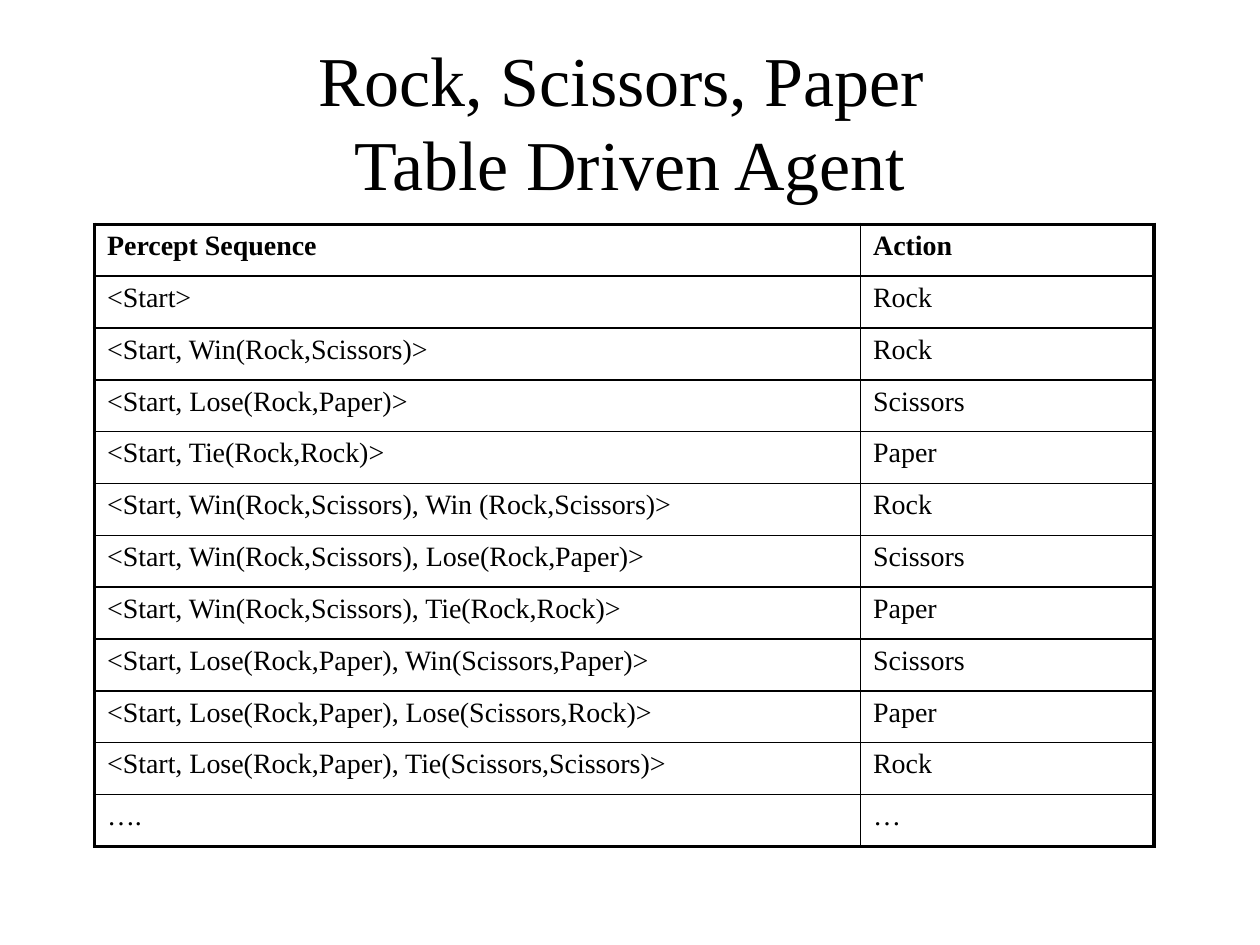
from lxml import etree
from pptx import Presentation
from pptx.dml.color import RGBColor
from pptx.enum.text import MSO_ANCHOR, PP_ALIGN
from pptx.oxml.ns import qn
from pptx.util import Inches, Pt

CENTER = PP_ALIGN.CENTER
MIDDLE = MSO_ANCHOR.MIDDLE
BLACK = "000000"
THICK, THIN = Pt(2.25), Pt(1)
TITLE_FORMAT = {"name": "Times New Roman", "size": Pt(40), "bold": False}
CELL_FORMAT = {"name": "Times New Roman", "size": Pt(16)}
ROWS = [
    ("Percept Sequence", "Action"),
    ("<Start>", "Rock"),
    ("<Start, Win(Rock,Scissors)>", "Rock"),
    ("<Start, Lose(Rock,Paper)>", "Scissors"),
    ("<Start, Tie(Rock,Rock)>", "Paper"),
    ("<Start, Win(Rock,Scissors), Win (Rock,Scissors)>", "Rock"),
    ("<Start, Win(Rock,Scissors), Lose(Rock,Paper)>", "Scissors"),
    ("<Start, Win(Rock,Scissors), Tie(Rock,Rock)>", "Paper"),
    ("<Start, Lose(Rock,Paper), Win(Scissors,Paper)>", "Scissors"),
    ("<Start, Lose(Rock,Paper), Lose(Scissors,Rock)>", "Paper"),
    ("<Start, Lose(Rock,Paper), Tie(Scissors,Scissors)>", "Rock"),
    ("….", "…"),
]
COLUMN_WIDTHS = [Inches(6.08), Inches(2.33)]
ROW_HEIGHT = Inches(4.94 / len(ROWS))


def format_font(font, values, color):
    for name, value in values.items():
        setattr(font, name, value)
    font.color.rgb = RGBColor.from_string(color)


def set_borders(cell, widths, color):
    """Draw the cell's edges; widths maps each edge tag to a line width."""
    properties = cell._tc.get_or_add_tcPr()
    for position, (tag, width) in enumerate(widths.items()):
        line = etree.Element(qn(f"a:{tag}"), w=str(int(width)))
        fill = etree.SubElement(line, qn("a:solidFill"))
        etree.SubElement(fill, qn("a:srgbClr"), val=color)
        properties.insert(position, line)


presentation = Presentation()
presentation.slide_width = Inches(10)
presentation.slide_height = Inches(7.5)
slide = presentation.slides.add_slide(presentation.slide_layouts[5])

title = slide.shapes.title
title.left, title.top = Inches(0.75), Inches(0.33)
title.width, title.height = Inches(8.5), Inches(1.25)
title.text_frame.text = "Rock, Scissors, Paper \vTable Driven Agent"
title.text_frame.vertical_anchor = MIDDLE
paragraph = title.text_frame.paragraphs[0]
paragraph.alignment = CENTER
paragraph.line_spacing = Pt(48)
for run in paragraph.runs:
    format_font(run.font, TITLE_FORMAT, BLACK)

table = slide.shapes.add_table(
    len(ROWS), len(COLUMN_WIDTHS), Inches(0.75), Inches(1.78),
    sum(COLUMN_WIDTHS), ROW_HEIGHT * len(ROWS)).table
table.horz_banding = False
for column, width in zip(table.columns, COLUMN_WIDTHS):
    column.width = width

last_row, last_column = len(ROWS) - 1, len(COLUMN_WIDTHS) - 1
for row_index, texts in enumerate(ROWS):
    table.rows[row_index].height = ROW_HEIGHT
    for column_index, text in enumerate(texts):
        cell = table.cell(row_index, column_index)
        cell.text = text
        cell.fill.background()
        paragraph = cell.text_frame.paragraphs[0]
        spacing = etree.SubElement(paragraph._p.get_or_add_pPr(), qn("a:spcBef"))
        etree.SubElement(spacing, qn("a:spcPct"), val="20000")
        font = paragraph.runs[0].font
        format_font(font, CELL_FORMAT, BLACK)
        font.bold = row_index == 0
        set_borders(cell, {
            "lnL": THICK if column_index == 0 else THIN,
            "lnR": THICK if column_index == last_column else THIN,
            "lnT": THICK if row_index == 0 else THIN,
            "lnB": THICK if row_index == last_row else THIN,
        }, BLACK)

presentation.save("out.pptx")
